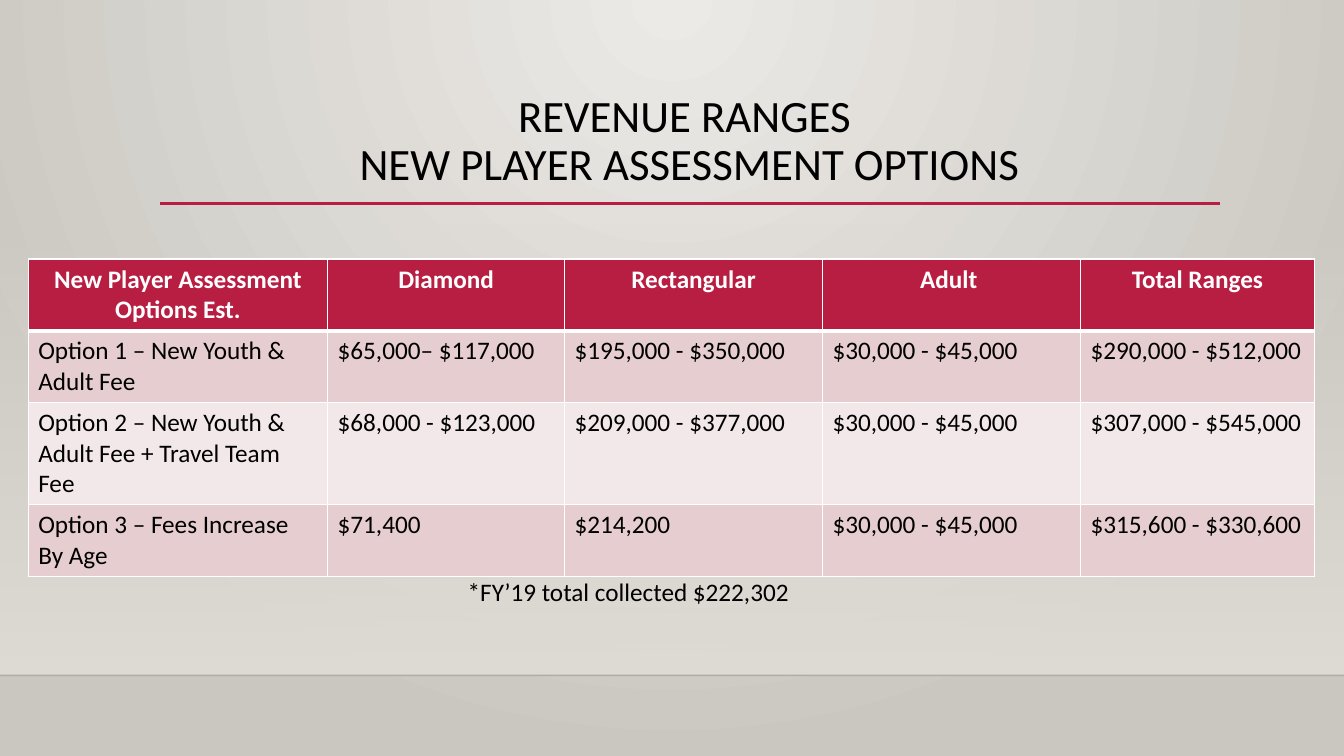
from lxml.etree import SubElement
from pptx import Presentation
from pptx.dml.color import RGBColor
from pptx.enum.shapes import MSO_CONNECTOR, MSO_SHAPE
from pptx.enum.text import MSO_ANCHOR, MSO_AUTO_SIZE, PP_ALIGN
from pptx.oxml import parse_xml
from pptx.oxml.ns import nsdecls, qn
from pptx.util import Inches, Pt

FONT = "Calibri"
BLACK = RGBColor(0x00, 0x00, 0x00)
WHITE = RGBColor(0xFF, 0xFF, 0xFF)
CRIMSON = RGBColor(0xB7, 0x1E, 0x42)
ROSE = RGBColor(0xE6, 0xCD, 0xCF)
PALE_ROSE = RGBColor(0xF3, 0xE8, 0xE9)
LIGHT_STONE = RGBColor(0xEC, 0xEA, 0xE7)
DARK_STONE = RGBColor(0xCA, 0xC7, 0xC1)
SAND = RGBColor(0xDF, 0xDB, 0xD5)
FLOOR_LINE = RGBColor(0x00, 0x00, 0x01)

SLIDE_WIDTH, SLIDE_HEIGHT = Inches(13.33), Inches(7.5)

# Positions and sizes are percentages of the slide
RULE_LEFT, RULE_RIGHT, RULE_TOP = 11.93, 90.77, 26.93
PANEL_TOP, FLOOR_TOP = 29.47, 89.33
TABLE_LEFT, TABLE_TOP = 2.1, 34.27
COLUMN_SHARES = [22.28, 17.63, 19.2, 19.2, 17.4]
ROW_SHARES = [9.33, 9.33, 13.33, 9.33]

REVENUE = [
    ["New Player Assessment Options Est.", "Diamond", "Rectangular", "Adult ", "Total Ranges"],
    ["Option 1 – New Youth & Adult Fee", "$65,000– $117,000",
     "$195,000 - $350,000", "$30,000 - $45,000", "$290,000 - $512,000"],
    ["Option 2 – New Youth & Adult Fee + Travel Team Fee", "$68,000 - $123,000",
     "$209,000 - $377,000", "$30,000 - $45,000", "$307,000 - $545,000"],
    ["Option 3 – Fees Increase By Age", "$71,400",
     "$214,200", "$30,000 - $45,000", "$315,600 - $330,600"],
]


def across(share):
    return round(SLIDE_WIDTH * share / 100)


def down(share):
    return round(SLIDE_HEIGHT * share / 100)


def frame(left, top, width, height):
    return across(left), down(top), across(width), down(height)


def set_gradient(owner, fill, stops, direction):
    """Fill with (colour, opacity percent) stops, first to last."""
    fill.gradient()
    stop_xml = "".join(
        f'<a:gs pos="{position}"><a:srgbClr val="{color}">'
        f'<a:alpha val="{opacity * 1000}"/></a:srgbClr></a:gs>'
        for position, (color, opacity) in zip((0, 100000), stops))
    gradient = parse_xml(f'<a:gradFill {nsdecls("a")} rotWithShape="1">'
                         f"<a:gsLst>{stop_xml}</a:gsLst>{direction}</a:gradFill>")
    current = owner.find(f".//{qn('a:gradFill')}")
    current.getparent().replace(current, gradient)


def add_rule(slide, left, right, top, color, weight, opacity=100):
    rule = slide.shapes.add_connector(
        MSO_CONNECTOR.STRAIGHT, across(left), down(top), across(right), down(top))
    rule.line.color.rgb = color
    rule.line.width = Pt(weight)
    if opacity < 100:
        color_node = rule.element.find(f".//{qn('a:srgbClr')}")
        SubElement(color_node, qn("a:alpha")).set("val", str(opacity * 1000))
    SubElement(rule.element.spPr, qn("a:effectLst"))


def add_run(para, text, size, color=BLACK, bold=False):
    span = para.add_run()
    span.text = text
    span.font.name = FONT
    span.font.size = Pt(size)
    span.font.bold = bold
    span.font.color.rgb = color


def set_borders(cell, bottom_weight):
    properties = cell._tc.get_or_add_tcPr()
    weights = {"lnL": 1, "lnR": 1, "lnT": 1, "lnB": bottom_weight}
    for index, (side, weight) in enumerate(weights.items()):
        properties.insert(index, parse_xml(
            f'<a:{side} {nsdecls("a")} w="{Pt(weight)}"><a:solidFill>'
            f'<a:srgbClr val="{WHITE}"/></a:solidFill></a:{side}>'))


def add_backdrop(slide):
    set_gradient(slide.element, slide.background.fill,
                 [(LIGHT_STONE, 100), (DARK_STONE, 100)],
                 '<a:path path="circle"><a:fillToRect l="43000" t="0" '
                 'r="43000" b="100000"/></a:path>')
    panel = slide.shapes.add_shape(
        MSO_SHAPE.RECTANGLE, *frame(0, PANEL_TOP, 100, FLOOR_TOP - PANEL_TOP))
    panel.shadow.inherit = False
    panel.line.fill.background()
    set_gradient(panel.element, panel.fill, [(SAND, 0), (SAND, 100)],
                 '<a:lin ang="5400000" scaled="0"/>')
    add_rule(slide, 0, 100, FLOOR_TOP, FLOOR_LINE, 1, opacity=20)
    add_rule(slide, RULE_LEFT, RULE_RIGHT, RULE_TOP, CRIMSON, 2.5)


def add_title(slide, lines):
    title = slide.shapes.title
    title.left, title.top, title.width, title.height = frame(RULE_LEFT, 11.73, 78.77, 15.33)
    title.element.getparent().append(title.element)  # in front of the backdrop
    text = title.text_frame
    text.word_wrap = True
    text.auto_size = MSO_AUTO_SIZE.NONE
    text.vertical_anchor = MSO_ANCHOR.TOP
    para = text.paragraphs[0]
    para.alignment = PP_ALIGN.CENTER
    para.line_spacing = 0.9
    for index, line in enumerate(lines):
        if index:
            para.add_line_break()
        add_run(para, line, 32)


def add_revenue_table(slide):
    table = slide.shapes.add_table(
        len(ROW_SHARES), len(COLUMN_SHARES),
        *frame(TABLE_LEFT, TABLE_TOP, sum(COLUMN_SHARES), sum(ROW_SHARES))).table
    for column, share in zip(table.columns, COLUMN_SHARES):
        column.width = across(share)
    for row_index, (row, share) in enumerate(zip(table.rows, ROW_SHARES)):
        row.height = down(share)
        header = row_index == 0
        band = ROSE if row_index % 2 else PALE_ROSE
        for cell, text in zip(row.cells, REVENUE[row_index]):
            cell.fill.solid()
            cell.fill.fore_color.rgb = CRIMSON if header else band
            set_borders(cell, 3 if header else 1)
            para = cell.text_frame.paragraphs[0]
            para.alignment = PP_ALIGN.CENTER if header else PP_ALIGN.LEFT
            add_run(para, text, 18, WHITE if header else BLACK, header)


def add_note(slide, text):
    box = slide.shapes.add_textbox(*frame(34.06, 75.6, 41.71, 5.33))
    box.text_frame.word_wrap = True
    box.text_frame.auto_size = MSO_AUTO_SIZE.SHAPE_TO_FIT_TEXT
    add_run(box.text_frame.paragraphs[0], text, 18)


def main():
    deck = Presentation()
    deck.slide_width, deck.slide_height = SLIDE_WIDTH, SLIDE_HEIGHT
    page = deck.slides.add_slide(deck.slide_layouts.get_by_name("Title Only"))
    add_backdrop(page)
    add_title(page, ["REVENUE RANGES ", "NEW PLAYER ASSESSMENT OPTIONS"])
    add_revenue_table(page)
    add_note(page, "*FY’19 total collected $222,302")
    deck.save("out.pptx")


if __name__ == "__main__":
    main()
